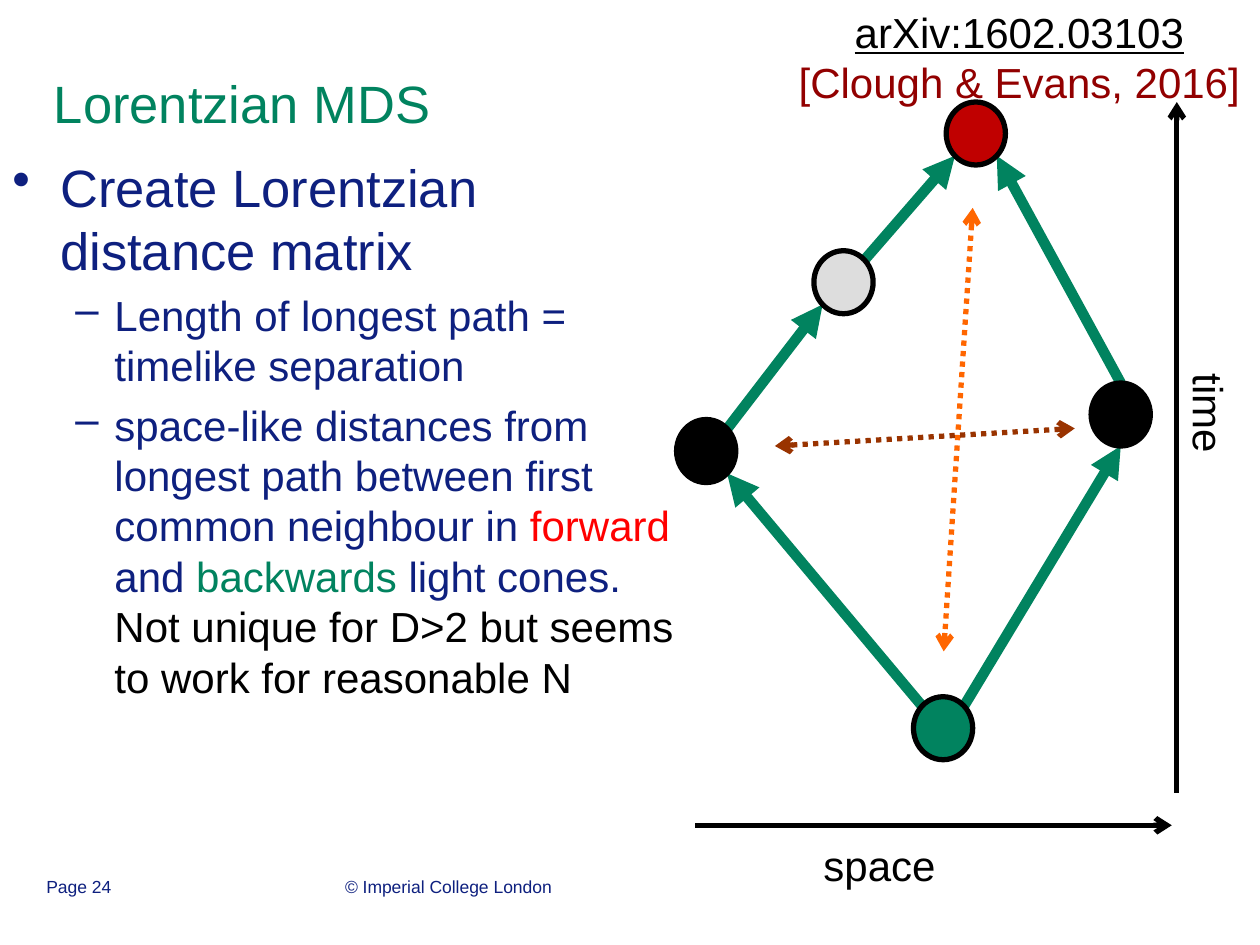
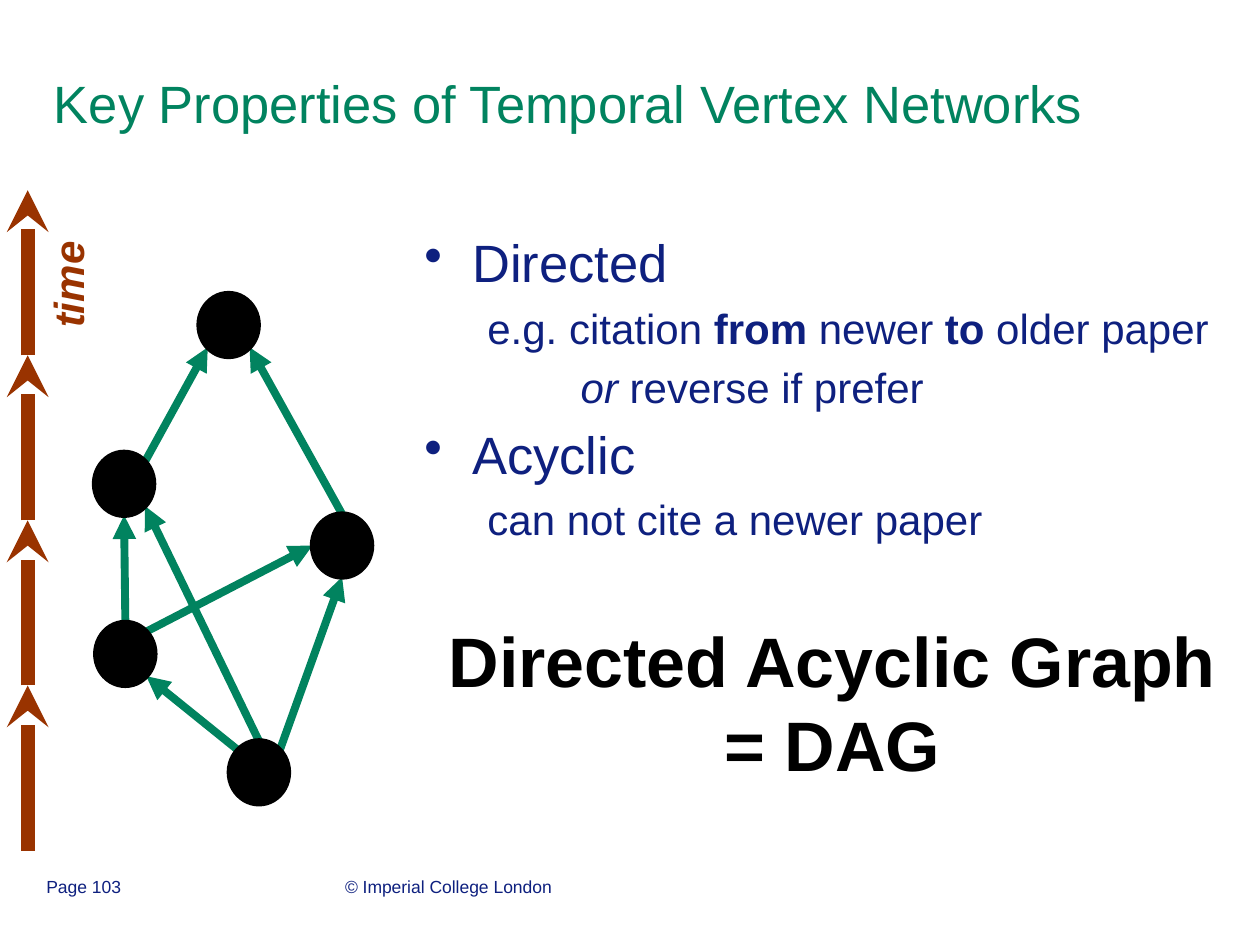
from pptx import Presentation
from pptx import util as u
from pptx.dml.color import RGBColor
from pptx.enum import dml, shapes, text
from pptx.oxml import ns
from lxml import etree

COLORS = {
    "green": "01835F", "navy": "0E207F", "black": "000000", "red": "FF0000",
    "crimson": "C00000", "maroon": "920000", "gray": "DDDDDD",
    "orange": "FF6600", "brown": "993300",
}
FONT = "Arial"
NODE_WIDTH, NODE_HEIGHT = 0.47, 0.5
DIAGONAL = 0.5 ** 0.5
SITES = {
    "n": (0, -1), "s": (0, 1), "w": (-1, 0),
    "ne": (DIAGONAL, -DIAGONAL), "nw": (-DIAGONAL, -DIAGONAL),
    "se": (DIAGONAL, DIAGONAL), "sw": (-DIAGONAL, DIAGONAL),
}


def rgb(name):
    return RGBColor.from_string(COLORS[name])


def site_point(corner, site):
    dx, dy = SITES[site]
    return (corner[0] + NODE_WIDTH / 2 * (1 + dx),
            corner[1] + NODE_HEIGHT / 2 * (1 + dy))


class Builder:
    def __init__(self):
        self.deck = Presentation()
        self.deck.slide_width = u.Inches(10)
        self.deck.slide_height = u.Inches(7.5)
        self.page = None

    def new_page(self, title, number):
        self.page = self.deck.slides.add_slide(self.deck.slide_layouts[6])
        heading = self.box(0.33, 0.19, 8.5, 1.25, anchor=text.MSO_ANCHOR.MIDDLE)
        self.para(heading, title, 30, "green")
        self.para(self.box(2.64, 6.9, 3.17, 0.52), "© Imperial College London", 10)
        self.para(self.box(0.27, 6.9, 2.33, 0.52), f"Page {number}", 10)

    def box(self, left, top, width, height, wrap=True, anchor=text.MSO_ANCHOR.TOP,
            rotation=0):
        box = self.page.shapes.add_textbox(*map(u.Inches, (left, top, width, height)))
        box.text_frame.word_wrap = wrap
        box.text_frame.vertical_anchor = anchor
        box.rotation = rotation
        return box

    def para(self, box, spans, size, color="navy", before=0, bullet=None, left=0,
             hanging=0, level=0, center=False, bold=None, italic=None):
        frame = box.text_frame
        fresh = len(frame.paragraphs) == 1 and not frame.paragraphs[0].runs
        para = frame.paragraphs[0] if fresh else frame.add_paragraph()
        para.level = level
        para.space_before = u.Pt(before)
        if center:
            para.alignment = text.PP_ALIGN.CENTER
        properties = para._p.get_or_add_pPr()
        properties.set("marL", str(u.Inches(left)))
        properties.set("indent", str(u.Inches(-hanging)))
        if bullet:
            etree.SubElement(properties, ns.qn("a:buChar"), char=bullet)
        else:
            etree.SubElement(properties, ns.qn("a:buNone"))
        para.font.name = FONT
        para.font.size = u.Pt(size)
        para.font.color.rgb = rgb(color)
        para.font.bold = bold
        para.font.italic = italic
        for item in [spans] if isinstance(spans, str) else spans:
            if item == "\n":
                para.add_line_break()
                continue
            words, style = (item, {}) if isinstance(item, str) else item
            span = para.add_run()
            span.text = words
            for name, value in style.items():
                if name == "color":
                    span.font.color.rgb = rgb(value)
                else:
                    setattr(span.font, name, value)

    def label(self, words, left, top, width, color="black", rotation=0, **style):
        box = self.box(left, top, width, 0.5, wrap=False, rotation=rotation)
        self.para(box, words, 24, color, center=True, **style)

    def topic(self, box, words, before=0):
        self.para(box, words, 30, before=before, bullet="•", left=0.38, hanging=0.38)

    def arrow(self, start, end, color, width, tip="triangle", both=False, dotted=False):
        line = self.page.shapes.add_connector(
            shapes.MSO_CONNECTOR.STRAIGHT, *map(u.Inches, (*start, *end)))
        line.line.color.rgb = rgb(color)
        line.line.width = u.Pt(width)
        if dotted:
            line.line.dash_style = dml.MSO_LINE.ROUND_DOT
        outline = line.line._get_or_add_ln()
        for end_name in ("a:headEnd", "a:tailEnd") if both else ("a:tailEnd",):
            etree.SubElement(outline, ns.qn(end_name), type=tip)
        etree.SubElement(line._element.spPr, ns.qn("a:effectLst"))

    def node(self, corner, color):
        node = self.page.shapes.add_shape(
            shapes.MSO_SHAPE.OVAL, *map(u.Inches, (*corner, NODE_WIDTH, NODE_HEIGHT)))
        node.shadow.inherit = False
        node.fill.solid()
        node.fill.fore_color.rgb = rgb(color)
        node.line.color.rgb = rgb("black")
        node.line.width = u.Pt(3)

    def graph(self, nodes, edges, width):
        for source, source_site, target, target_site in edges:
            self.arrow(site_point(nodes[source][0], source_site),
                       site_point(nodes[target][0], target_site), "green", width)
        for corner, color in nodes.values():
            self.node(corner, color)


def lorentzian_page(builder):
    builder.new_page("Lorentzian MDS", 24)
    body = builder.box(0, 1.18, 5.49, 5.54)
    builder.topic(body, "Create Lorentzian distance matrix")
    details = [
        "Length of longest path = timelike separation",
        ["space-like distances from longest path between first common neighbour in ",
         ("forward", {"color": "red"}), " and ", ("backwards", {"color": "green"}),
         " light cones.", "\n",
         ("Not unique for D>2 but seems to work for reasonable N", {"color": "black"})],
    ]
    for detail in details:
        builder.para(body, detail, 24, before=5, bullet="–", left=0.81, hanging=0.31,
                     level=1)

    nodes = {
        "future": ((7.51, 0.81), "crimson"),
        "right": ((8.66, 3.04), "black"),
        "left": ((5.37, 3.33), "black"),
        "middle": ((6.46, 1.99), "gray"),
        "past": ((7.25, 5.53), "green"),
    }
    edges = [
        ("middle", "ne", "future", "sw"),
        ("left", "ne", "middle", "sw"),
        ("past", "nw", "left", "se"),
        ("past", "ne", "right", "s"),
        ("right", "n", "future", "se"),
    ]
    builder.graph(nodes, edges, 6)
    builder.arrow((5.52, 6.55), (9.3, 6.55), "black", 3, "arrow")
    builder.arrow((9.34, 6.29), (9.34, 0.81), "black", 3, "arrow")
    builder.label("space", 6.43, 6.61, 1.1)
    builder.label("time", 9.18, 3.03, 0.84, rotation=90)
    builder.arrow((7.72, 1.65), (7.49, 5.17), "orange", 3, "arrow", True, True)
    builder.arrow((6.15, 3.54), (8.53, 3.4), "brown", 3, "arrow", True, True)
    citation = [("arXiv:1602.03103", {"underline": True}), "\n",
                ("[Clough & Evans, 2016]", {"color": "maroon"})]
    builder.para(builder.box(6.22, 0, 3.74, 0.91, wrap=False), citation, 24, "black",
                 center=True)


def properties_page(builder):
    builder.new_page("Key Properties of Temporal Vertex Networks", 103)
    body = builder.box(3.27, 1.78, 6.61, 5.05)
    strong = {"bold": True}
    builder.topic(body, "Directed")
    builder.para(body, ["e.g. citation ", ("from ", strong), "newer ", ("to", strong),
                        " older paper"], 24, before=5, left=0.5, level=1)
    builder.para(body, [("or ", {"italic": True}), "reverse if prefer"], 24, before=5,
                 left=1.24, level=1)
    builder.topic(body, "Acyclic", before=6)
    builder.para(body, "can not cite a newer paper", 24, before=5, left=0.5, level=1)
    builder.para(body, "Directed Acyclic Graph = DAG", 40, "black", before=42, left=0.06,
                 center=True, bold=True)

    corners = {
        "top": (1.58, 2.33), "right": (2.48, 4.08), "lower left": (0.76, 4.94),
        "upper left": (0.75, 3.59), "bottom": (1.82, 5.88),
    }
    nodes = {name: (corner, "black") for name, corner in corners.items()}
    edges = [
        ("upper left", "ne", "top", "sw"),
        ("lower left", "n", "upper left", "s"),
        ("bottom", "nw", "lower left", "se"),
        ("bottom", "ne", "right", "s"),
        ("right", "n", "top", "se"),
        ("lower left", "ne", "right", "w"),
        ("bottom", "n", "upper left", "se"),
    ]
    builder.graph(nodes, edges, 4.5)
    builder.label("time", 0.09, 2.01, 0.89, "brown", 270, bold=True, italic=True)
    step = 1.31
    for index in range(4):
        tip = 1.51 + index * step
        builder.arrow((0.22, tip + step), (0.22, tip), "brown", 8, "stealth")


def main():
    builder = Builder()
    lorentzian_page(builder)
    properties_page(builder)
    builder.deck.save("out.pptx")


if __name__ == "__main__":
    main()
